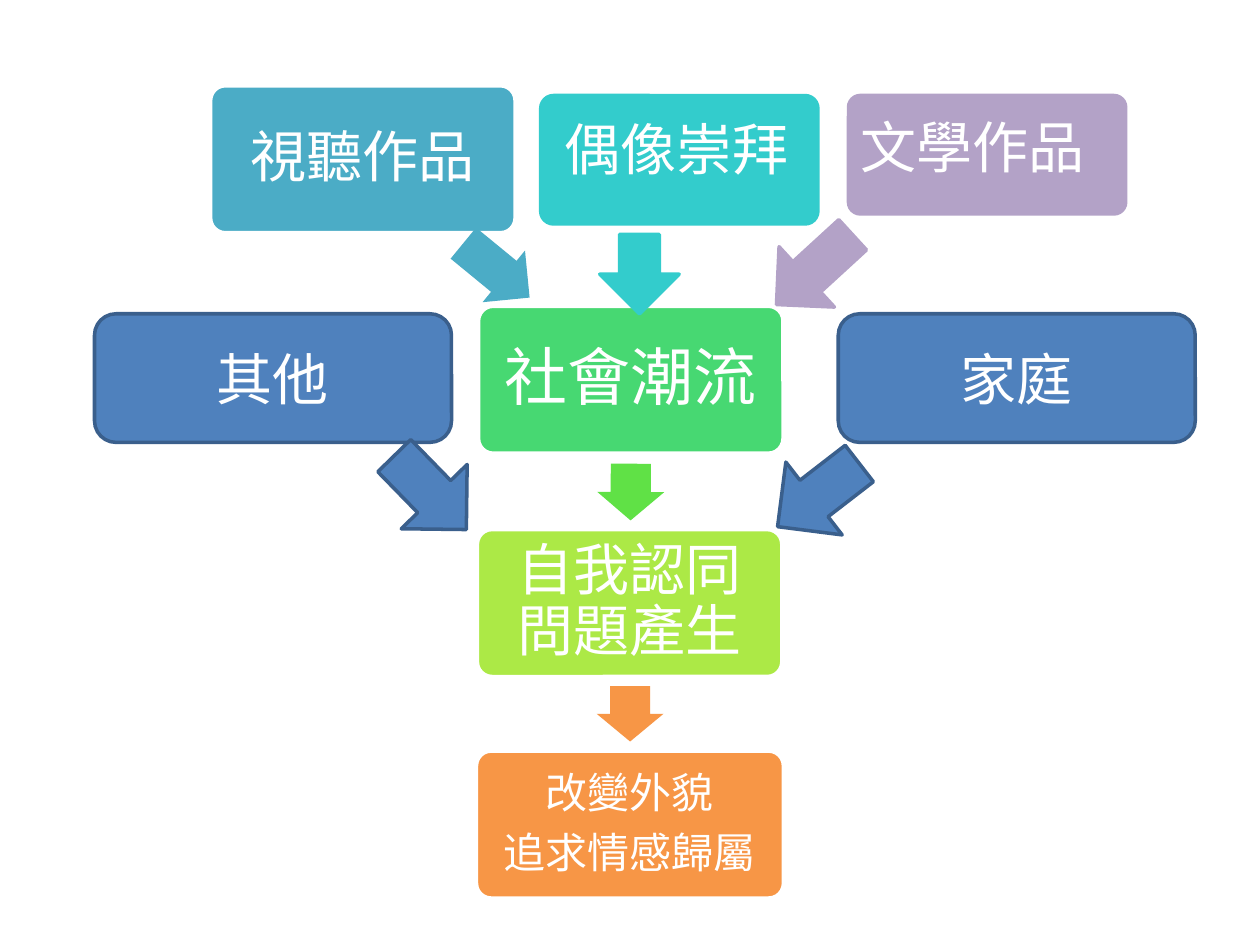
from lxml.etree import SubElement
from pptx import Presentation
from pptx.dml.color import RGBColor
from pptx.enum.shapes import MSO_SHAPE
from pptx.enum.text import MSO_ANCHOR, PP_ALIGN
from pptx.oxml.ns import qn
from pptx.util import Pt

FONT = "Noto Sans CJK JP"
WHITE, TEAL, CYAN, PURPLE = "FFFFFF", "4BACC6", "33CCCC", "B3A2C7"
GREEN, LEAF, LIME, ORANGE = "47D872", "60E146", "ACE946", "F79646"
BLUE, NAVY = "4F81BD", "3A5F8C"

# Boxes: lines, (left, top, width, height), fill, outline, corner, text format
BOXES = [
    (["視聽作品"], (120.4, 49, 174, 84), TEAL, WHITE, 0.1, dict(spacing=0.9)),
    (["社會潮流"], (273.5, 175, 174, 84), GREEN, WHITE, 0.1, dict(size=36, spacing=0.9)),
    (["自我認同", "問題產生"], (272.8, 302.6, 174, 84), LIME, WHITE, 0.1, dict(spacing=0.9)),
    (["改變外貌", "追求情感歸屬"], (272.3, 429.2, 175.4, 84), ORANGE, WHITE, 0.1,
     dict(size=24, spacing=0.9, gap=8.4)),
    ([], (309, 54.6, 158.4, 73.4), CYAN, CYAN, 0.1, {}),
    ([], (484.9, 54.6, 158.4, 67.7), PURPLE, PURPLE, 0.1, {}),
    (["家庭"], (479, 179.3, 204, 73.5), BLUE, NAVY, 0.1667, {}),
    (["其他"], (54, 179.3, 204, 73.5), BLUE, NAVY, 0.1667, {}),
]

# Arrows: preset, (left, top, width, height), rotation, fill, outline
RIGHT, DOWN = MSO_SHAPE.RIGHT_ARROW, MSO_SHAPE.DOWN_ARROW
ARROWS = [
    (RIGHT, (259.2, 135.4, 49, 38.2), 39.4, TEAL, None),
    (RIGHT, (344.2, 262.1, 32.4, 38.2), 90.3, LEAF, None),
    (RIGHT, (344.2, 388.8, 31.7, 38.2), 90, ORANGE, None),
    (DOWN, (342.7, 134, 45.4, 45.4), 0, CYAN, CYAN),
    (DOWN, (442.1, 124.6, 46.8, 59), 47.5, PURPLE, PURPLE),
    (DOWN, (441.4, 253.4, 52.6, 59), 52.3, BLUE, NAVY),
    (DOWN, (219.6, 252, 52.6, 59), 315.7, BLUE, NAVY),
]

# Free labels: lines, (left, top, width, height), text format
LABELS = [
    (["偶像崇拜"], (314.6, 66.2, 144, 42.5), dict(spacing=0.9)),
    (["文學作品"], (484.6, 60.5, 144, 46), dict(align=PP_ALIGN.LEFT)),
]


def color(value):
    return RGBColor.from_string(value)


def points(place):
    return [Pt(value) for value in place]


def write_text(frame, lines, size=32, align=PP_ALIGN.CENTER, spacing=1.0, gap=0,
               anchor=MSO_ANCHOR.MIDDLE, wrap=True):
    frame.word_wrap = wrap
    frame.vertical_anchor = anchor
    for number, line in enumerate(lines):
        paragraph = frame.add_paragraph() if number else frame.paragraphs[0]
        paragraph.alignment = align
        paragraph.line_spacing = spacing
        paragraph.space_after = Pt(gap)
        run = paragraph.add_run()
        run.text = line
        run.font.size = Pt(size)
        run.font.name = FONT
        run.font.color.rgb = color(WHITE)
        # Chinese characters take the East Asian font
        SubElement(run.font._element, qn("a:ea"), typeface=FONT)


def add_block(slide, preset, place, fill, outline):
    shape = slide.shapes.add_shape(preset, *points(place))
    shape.shadow.inherit = False
    shape.fill.solid()
    shape.fill.fore_color.rgb = color(fill)
    if outline:
        shape.line.color.rgb = color(outline)
        shape.line.width = Pt(2)
    else:
        shape.line.fill.background()
    return shape


presentation = Presentation()
presentation.slide_width, presentation.slide_height = Pt(720), Pt(540)
slide = presentation.slides.add_slide(presentation.slide_layouts[6])

for lines, place, fill, outline, corner, text_format in BOXES:
    box = add_block(slide, MSO_SHAPE.ROUNDED_RECTANGLE, place, fill, outline)
    box.adjustments[0] = corner
    write_text(box.text_frame, lines, **text_format)

for preset, place, rotation, fill, outline in ARROWS:
    arrow = add_block(slide, preset, place, fill, outline)
    arrow.rotation = rotation
    if preset == RIGHT:
        arrow.adjustments[0] = 0.6

for lines, place, text_format in LABELS:
    label = slide.shapes.add_textbox(*points(place))
    write_text(label.text_frame, lines, anchor=MSO_ANCHOR.TOP, wrap=False, **text_format)

presentation.save("out.pptx")
